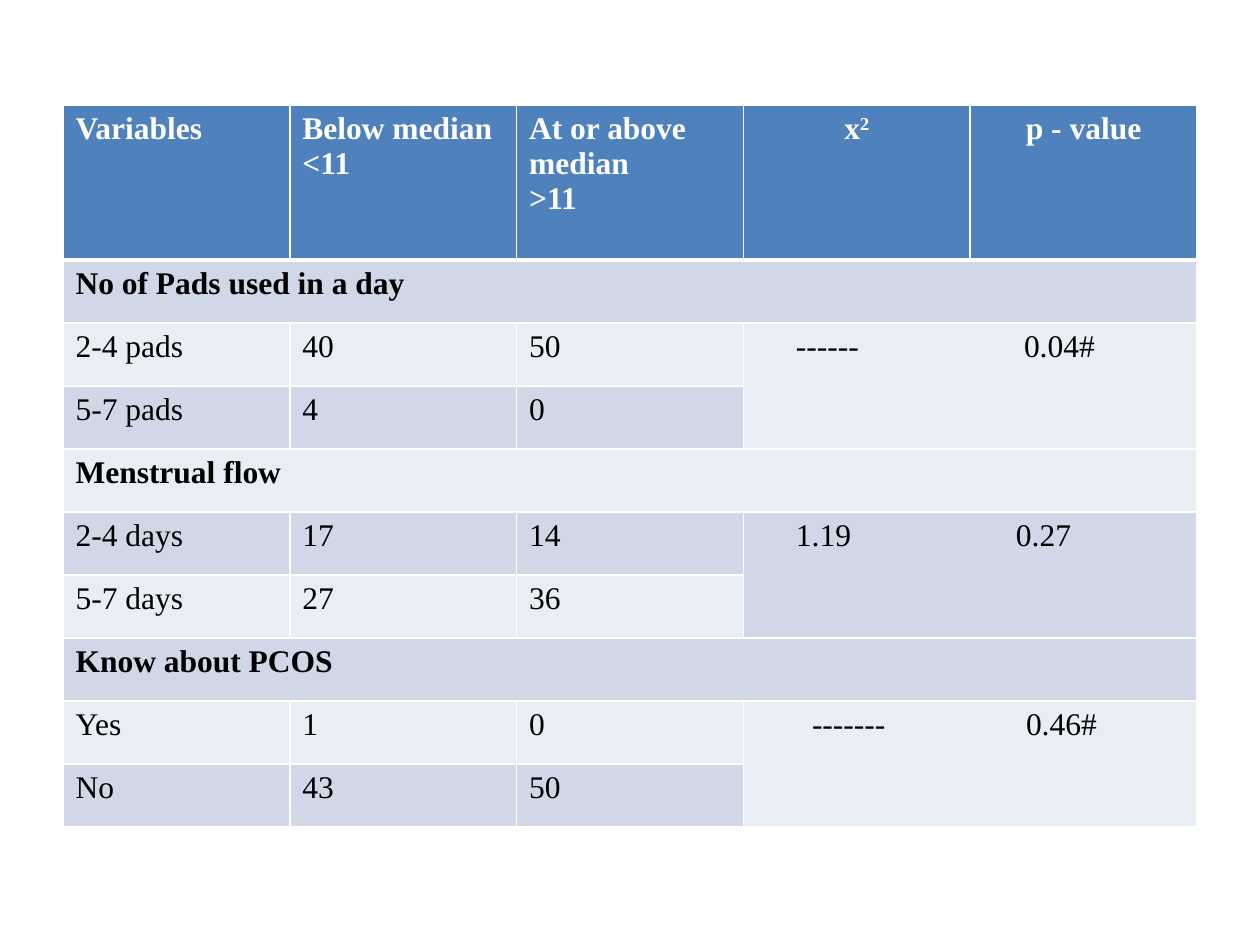
from lxml import etree
from pptx import Presentation
from pptx import util as u
from pptx.dml.color import RGBColor
from pptx.enum import text
from pptx.oxml import ns

PX = 914400 / 126
MID = text.PP_ALIGN.CENTER


def px(n):
    return u.Emu(round(n * PX))


def paint(fill, code):
    fill.solid()
    fill.fore_color.rgb = RGBColor.from_string(code)


deck = Presentation()
deck.slide_width, deck.slide_height = px(1260), px(945)
page = deck.slides.add_slide(deck.slide_layouts[6])

rows = [
    ["Variables", "Below median <11", "At or above median\n>11", "x2", "p - value"],
    ["No of Pads used in a day"],
    ["2-4 pads", "40", "50", "\t------\t0.04#"],
    ["5-7 pads", "4", "0"],
    ["Menstrual flow"],
    ["2-4 days", "17", "14", "\t1.19\t0.27"],
    ["5-7 days", "27", "36"],
    ["Know about PCOS"],
    ["Yes", "1", "0", "\t-------\t0.46#"],
    ["No", "43", "50"],
]
stops = {2: (40, 268), 5: (40, 260), 8: (56, 270)}

frame = page.shapes.add_table(len(rows), 5, px(63), px(105), px(1134), px(722))
grid = frame.table
for col in grid.columns:
    col.width = u.Inches(1.8)
for r, row in enumerate(grid.rows):
    row.height = px(63 if r else 155)

for r, words in enumerate(rows):
    for c in range(5):
        cell = grid.cell(r, c)
        paint(cell.fill, ("D0D8E8" if r % 2 else "E9EDF4") if r else "4F81BD")
        props = cell._tc.get_or_add_tcPr()
        for i, side in enumerate("LRTB"):
            thick = (r, side) in ((0, "B"), (1, "T"))
            line = etree.Element(ns.qn("a:ln" + side), w=str(u.Pt(3 if thick else 1)))
            tint = etree.SubElement(line, ns.qn("a:solidFill"))
            etree.SubElement(tint, ns.qn("a:srgbClr"), val="FFFFFF")
            props.insert(i, line)
        if c >= len(words):
            continue
        cell.text = words[c]
        for para in cell.text_frame.paragraphs:
            if words[c] == "x2":
                para.runs[0].text = "x"
                power = para.add_run()
                power.text = "2"
                power._r.get_or_add_rPr().set("baseline", "30000")
            if r == 0 and c > 2:
                para.alignment = MID
            if c == 3 and r in stops:
                tabs = etree.SubElement(para._p.get_or_add_pPr(), ns.qn("a:tabLst"))
                for stop in stops[r]:
                    etree.SubElement(tabs, ns.qn("a:tab"), pos=str(px(stop)), algn="l")
            look = {"name": "Times New Roman", "size": u.Pt(18), "bold": r == 0 or len(words) == 1}
            for run in para.runs:
                for key, val in look.items():
                    setattr(run.font, key, val)
                paint(run.font.fill, "000000" if r else "FFFFFF")

for r in (1, 4, 7):
    grid.cell(r, 0).merge(grid.cell(r, 4))
    grid.cell(r + 1, 3).merge(grid.cell(r + 2, 4))

deck.save("out.pptx")
